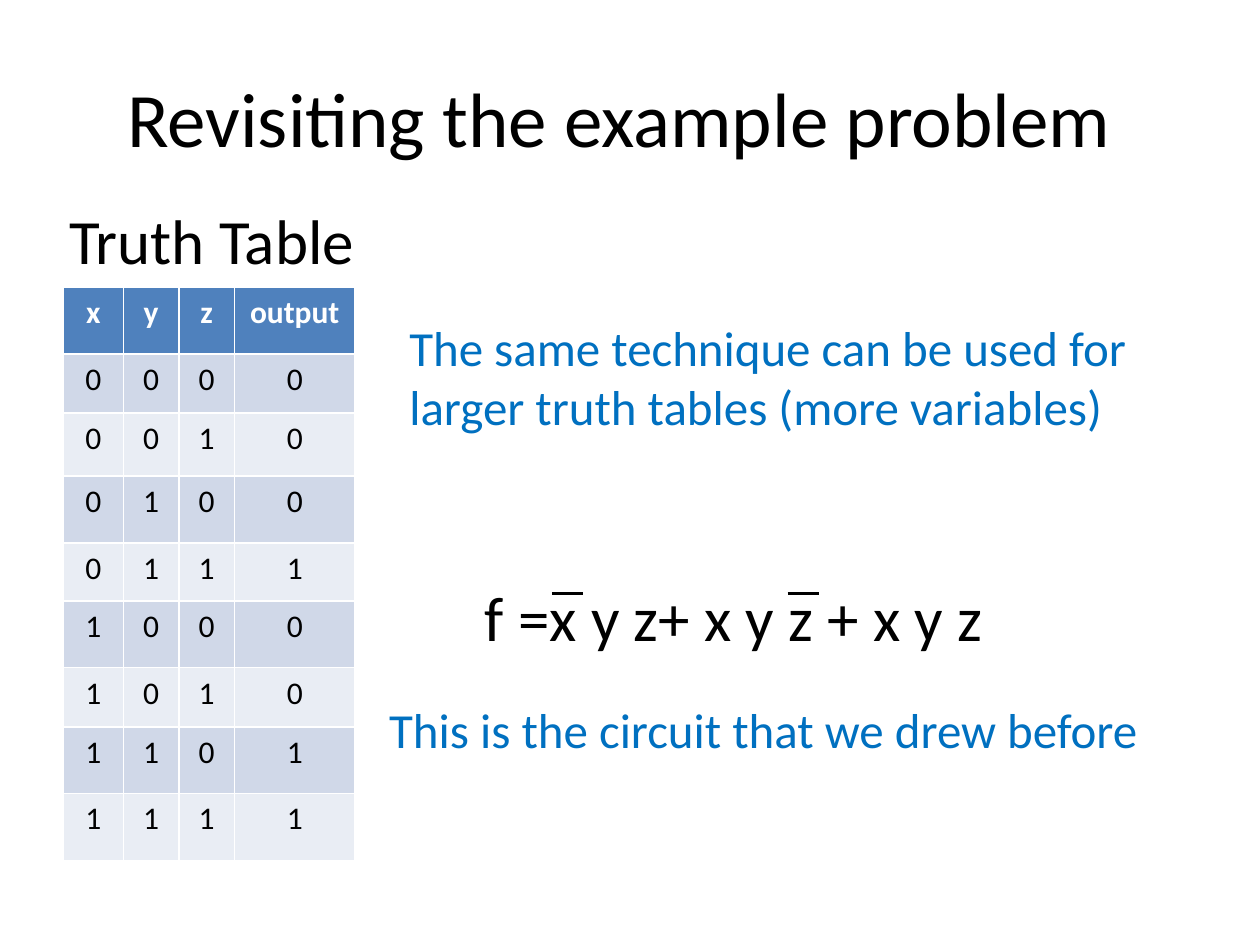
from itertools import product

from lxml.etree import SubElement
from pptx import Presentation
from pptx.dml.color import RGBColor
from pptx.enum.shapes import MSO_CONNECTOR
from pptx.enum.text import MSO_ANCHOR, PP_ALIGN
from pptx.oxml.ns import qn
from pptx.util import Inches, Pt

BLACK = RGBColor(0x00, 0x00, 0x00)
WHITE = RGBColor(0xFF, 0xFF, 0xFF)
BLUE = RGBColor(0x00, 0x70, 0xC0)
HEADER_FILL = RGBColor(0x4F, 0x81, 0xBD)
BAND_FILLS = (RGBColor(0xD0, 0xD8, 0xE8), RGBColor(0xE9, 0xED, 0xF4))
FONT = "Calibri"

TITLE = "Revisiting the example problem"
# text, (left, top, width, height), size, colour, wraps
TEXTS = [
    ("Truth Table", (0.45, 1.55, 2.52, 0.71), 36, BLACK, False),
    ("This is the circuit that we drew before", (2.99, 5.5, 6.85, 1.1), 28, BLUE, True),
    ("f =x y z+ x y z + x y z", (3.75, 4.54, 4.25, 0.71), 36, BLACK, False),
    ("The same technique can be used for larger truth tables (more variables)",
     (3.15, 2.47, 6.85, 1.1), 28, BLUE, True),
]
NEGATION_LEFTS = (4.38, 6.25)
NEGATION_TOP, NEGATION_WIDTH = 4.71, 0.25

HEADERS = ("x", "y", "z", "output")
OUTPUTS = (0, 0, 0, 1, 0, 0, 1, 1)
TABLE_AREA = (0.5, 2.28, 2.32, 4.54)
COLUMN_WIDTHS = (0.48, 0.44, 0.44, 0.96)
ROW_HEIGHTS = (0.53, 0.47, 0.5, 0.53, 0.46, 0.53, 0.47, 0.53, 0.53)


def style_text(para, size, color, bold=False):
    for span in para.runs:
        span.font.name = FONT
        span.font.size = Pt(size)
        span.font.bold = bold
        span.font.color.rgb = color


def add_text(page, text, area, size, color, wraps):
    box = page.shapes.add_textbox(*map(Inches, area))
    frame = box.text_frame
    frame.word_wrap = wraps
    frame.text = text
    style_text(frame.paragraphs[0], size, color)
    return frame


def add_truth_table(page):
    inputs = product((0, 1), repeat=3)
    rows = [HEADERS] + [(*bits, output) for bits, output in zip(inputs, OUTPUTS)]
    table = page.shapes.add_table(len(rows), len(HEADERS), *map(Inches, TABLE_AREA)).table
    for column, width in zip(table.columns, COLUMN_WIDTHS):
        column.width = Inches(width)
    for index, (values, height) in enumerate(zip(rows, ROW_HEIGHTS)):
        table.rows[index].height = Inches(height)
        is_header = index == 0
        for cell, value in zip(table.rows[index].cells, values):
            cell.fill.solid()
            cell.fill.fore_color.rgb = HEADER_FILL if is_header else BAND_FILLS[(index - 1) % 2]
            cell.text = str(value)
            para = cell.text_frame.paragraphs[0]
            para.alignment = PP_ALIGN.CENTER
            style_text(para, 18, WHITE if is_header else BLACK, is_header)


def add_negation_bar(page, left):
    top = Inches(NEGATION_TOP)
    bar = page.shapes.add_connector(
        MSO_CONNECTOR.STRAIGHT, Inches(left), top, Inches(left + NEGATION_WIDTH), top)
    bar.line.color.rgb = BLACK
    bar.line.width = Pt(2)
    SubElement(bar.element.spPr, qn("a:effectLst"))


def main():
    deck = Presentation()
    deck.slide_width, deck.slide_height = Inches(10), Inches(7.5)
    page = deck.slides.add_slide(deck.slide_layouts[6])

    title = add_text(page, TITLE, (0.34, 0.3, 9.15, 1.25), 44, BLACK, True)
    title.vertical_anchor = MSO_ANCHOR.MIDDLE
    title.paragraphs[0].alignment = PP_ALIGN.CENTER
    add_truth_table(page)
    for text in TEXTS:
        add_text(page, *text)
    for left in NEGATION_LEFTS:
        add_negation_bar(page, left)
    deck.save("out.pptx")


if __name__ == "__main__":
    main()
